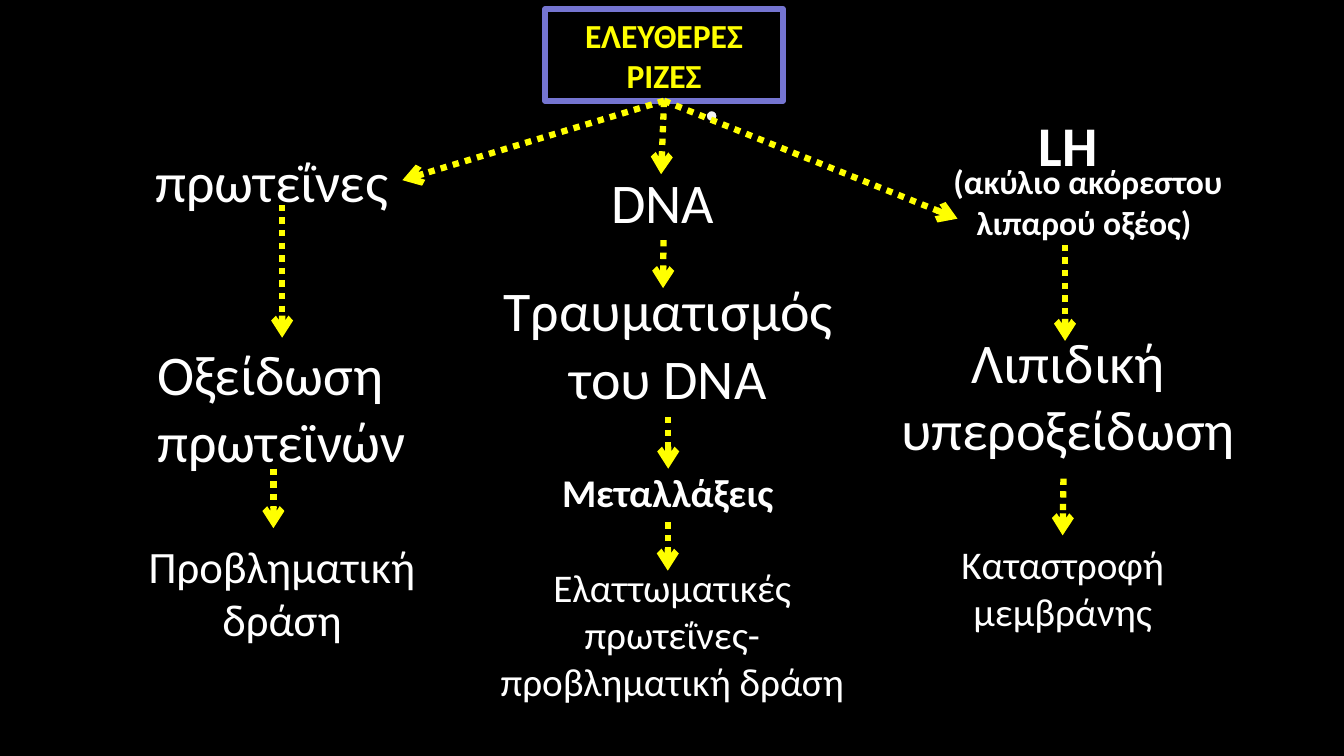
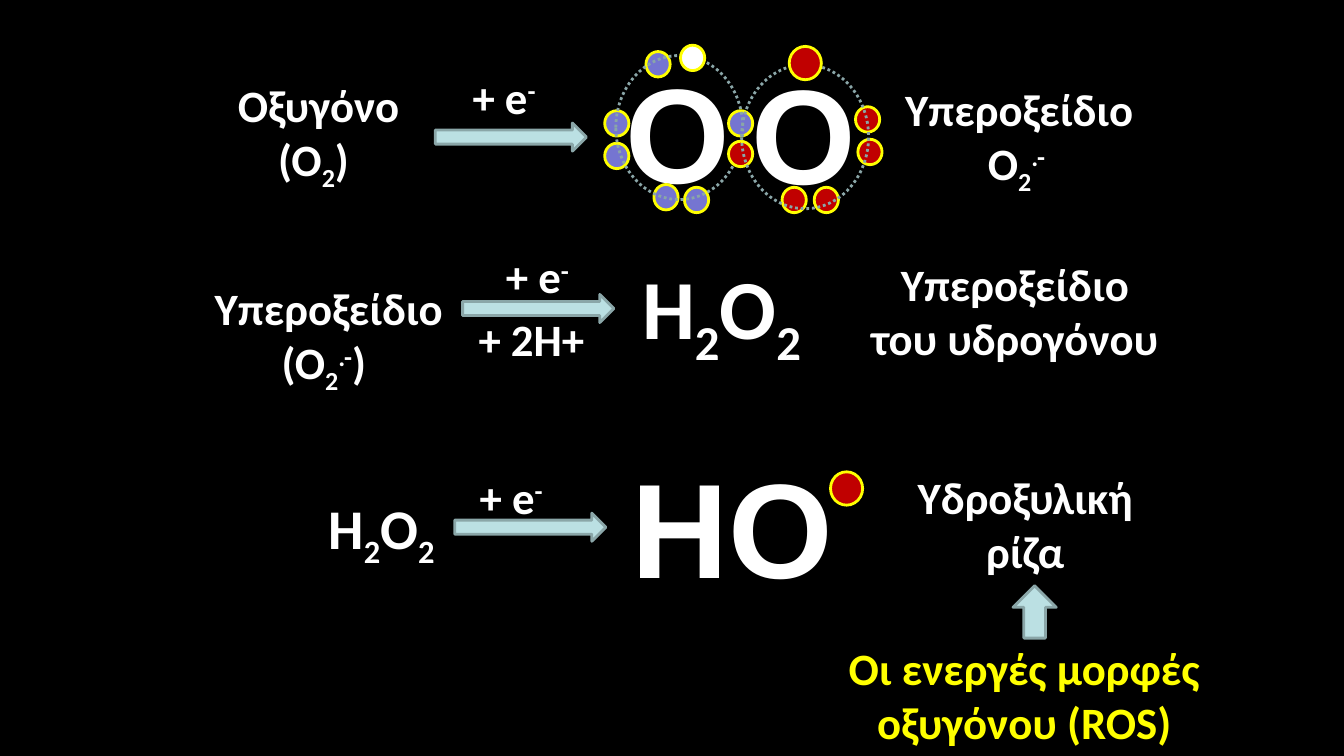
import dataclasses

import pptx
import pptx.dml.color
import pptx.enum.dml
import pptx.enum.shapes
import pptx.enum.text
import pptx.oxml.ns
import pptx.util
from lxml import etree

Cm = pptx.util.Cm
Pt = pptx.util.Pt
qn = pptx.oxml.ns.qn
SHAPE = pptx.enum.shapes.MSO_SHAPE
FIT = pptx.enum.text.MSO_AUTO_SIZE


@dataclasses.dataclass(frozen=True)
class Theme:
    black: str = "000000"
    white: str = "FFFFFF"
    pale: str = "F2F2F2"
    yellow: str = "FFFF00"
    violet: str = "7575D1"
    red: str = "C00000"
    ice: str = "BBE0E3"
    slate: str = "8AA6A8"
    body: str = "Calibri"
    atom: str = "Arial"
    small: int = 24
    note: int = 28
    label: int = 32
    head: int = 40
    formula: int = 60
    symbol: int = 96
    thick: float = 4.5
    thin: float = 2


T = Theme()
TITLE_ONLY, BLANK = 5, 6
TOP, LEFT, BOTTOM, RIGHT = range(4)
SUB2 = ("2", -25)
ELECTRON = ["+ e", ("-", 30)]
PEROXIDE = ["H", SUB2, "O", SUB2]

TITLE = "ΕΛΕΥΘΕΡΕΣ ΡΙΖΕΣ"
TITLE_BOX = (13.74, 0.23, 5.99, 2.31)
DOT_BOX = (17.73, 2.72, 0.41, 0.41)

CENTER = dict(center=True)
WRAP = dict(center=True, wrap=True)
BOLD = dict(bold=True)
BOLD_CENTER = dict(BOLD, **CENTER)
BOLD_WRAP = dict(BOLD, **WRAP)

EFFECTS = {
    "lh": ((25.93, 2.67, 2.01, 1.96), [["LH"]], T.head, BOLD),
    "acyl": ((23.72, 3.94, 7.39, 2.31), [["(ακύλιο ακόρεστου λιπαρού οξέος) "]], T.small, BOLD_WRAP),
    "proteins": ((3.66, 3.56, 6.48, 1.96), [["πρωτεΐνες"]], T.head, {}),
    "dna": ((15.16, 4.09, 3.12, 1.96), [["DNA"]], T.head, {}),
    "oxidation": ((3.71, 8.43, 6.81, 3.68), [["Οξείδωση πρωτεϊνών"]], T.head, dict(wrap=True)),
    "damage": ((12.14, 6.83, 9.4, 3.68), [["Τραυματισμός του DNA"]], T.head, WRAP),
    "lipid": ((22.22, 8.13, 9.4, 3.68), [["Λιπιδική υπεροξείδωση"]], T.head, WRAP),
    "mutations": ((12.24, 11.68, 9.4, 6.25),
                  [["Μεταλλάξεις "], ["Ελαττωματικές πρωτεΐνες-προβληματική δράση"]],
                  T.note, WRAP),
    "action": ((2.54, 13.44, 9.14, 3), [["Προβληματική δράση"]], T.label, WRAP),
    "membrane": ((22.22, 13.49, 9.12, 2.64), [["Kαταστροφή μεμβράνης"]], T.note, WRAP),
}
ARROWS = [
    (("title", BOTTOM), ("proteins", RIGHT)),
    (("title", BOTTOM), (16.66, 4.39)),
    (("title", BOTTOM), (24.13, 5.51)),
    ((7.11, 5.16), (7.11, 8.51)),
    (("dna", BOTTOM), (16.71, 7.26)),
    ((26.84, 6.17), (26.84, 8.59)),
    (("damage", BOTTOM), (16.84, 11.81)),
    ((26.8, 12.06), ("membrane", TOP)),
    ((6.89, 11.81), (6.89, 13.31)),
    ((16.83, 13.16), (16.83, 14.38)),
]

REACTIONS = [
    ((5.72, 1.83, 4.62, 3), [["Οξυγόνο"], ["(O", SUB2, ") "]], T.label, BOLD_CENTER),
    ((22.53, 1.93, 6.32, 3), [["Υπεροξείδιο"], ["O", SUB2, (".- ", 30)]], T.label, BOLD_CENTER),
    ((11.66, 1.63, 2.39, 1.63), [ELECTRON], T.label, BOLD),
    ((5.13, 6.96, 6.32, 3), [["Υπεροξείδιο"], ["(O", SUB2, (".-", 30), ") "]], T.label, BOLD_CENTER),
    ((12.5, 6.15, 2.39, 1.63), [ELECTRON], T.label, BOLD),
    ((11.81, 7.72, 3.48, 1.63), [["+ 2H+"]], T.label, BOLD),
    ((15.93, 6.32, 4.75, 2.82), [PEROXIDE], T.formula, BOLD),
    ((21.67, 6.35, 7.82, 3), [["Υπεροξείδιο"], ["του υδρογόνου"]], T.label, BOLD_CENTER),
    ((8.03, 12.32, 3.33, 1.96), [PEROXIDE], T.head, BOLD),
    ((11.84, 11.71, 2.39, 1.63), [ELECTRON], T.label, BOLD),
    ((15.67, 11.07, 5.64, 4.37), [["HΟ"]], T.symbol, dict(BOLD, font=T.atom)),
    ((22.78, 11.71, 6.12, 3), [["Υδροξυλική ρίζα"]], T.label, BOLD_WRAP),
    ((20.57, 16.03, 10.49, 3), [["Οι ενεργές μορφές οξυγόνου (ROS)"]], T.label,
     dict(BOLD_WRAP, color=T.yellow)),
]
BLOCK_ARROWS = [
    (SHAPE.RIGHT_ARROW, (10.97, 3.1, 3.81, 0.71)),
    (SHAPE.RIGHT_ARROW, (11.66, 7.42, 3.81, 0.71)),
    (SHAPE.RIGHT_ARROW, (11.46, 12.93, 3.81, 0.71)),
    (SHAPE.UP_ARROW, (25.53, 14.76, 1.09, 1.32)),
]
ELECTRON_SIZE = (0.61, 0.64)
RADICAL_SIZE = (0.81, 0.84)
ORBIT_SIZE = (3.2, 3.63)
LETTER_SIZE = (3.23, 4.52)
ATOMS = [
    dict(letter=(15.52, 1.12), orbit=(15.52, 1.4), electrons={
        T.violet: [(15.24, 2.79), (15.24, 3.61), (16.48, 4.65),
                   (18.36, 2.79), (16.28, 1.3), (17.25, 4.72)]}),
    dict(letter=(18.69, 1.14), orbit=(18.69, 1.63), electrons={
        T.white: [(17.15, 1.14)],
        T.red: [(18.36, 3.56), (21.62, 3.51), (21.56, 2.69),
                (19.71, 4.72), (20.52, 4.72)]}),
]
RADICALS = [(19.89, 1.17), (20.93, 11.89)]


def rgb(color):
    return pptx.dml.color.RGBColor.from_string(color)


def set_line(line, color, width, dotted=False):
    line.color.rgb = rgb(color)
    line.width = Pt(width)
    if dotted:
        line.dash_style = pptx.enum.dml.MSO_LINE.ROUND_DOT


def write(sp, paragraphs, size, color=T.white, font=T.body, bold=False, center=False,
          wrap=False, fit=FIT.SHAPE_TO_FIT_TEXT):
    tf = sp.text_frame
    tf.word_wrap = wrap
    tf.auto_size = fit
    for i, runs in enumerate(paragraphs):
        p = tf.add_paragraph() if i else tf.paragraphs[0]
        if center:
            p.alignment = pptx.enum.text.PP_ALIGN.CENTER
        for run in runs:
            text, base = (run, 0) if isinstance(run, str) else run
            r = p.add_run()
            r.text = text
            r.font.name = font
            r.font.size = Pt(size)
            r.font.bold = bold
            r.font.color.rgb = rgb(color)
            if base:
                r._r.get_or_add_rPr().set("baseline", str(base * 1000))


def add_text(s, box, paragraphs, size, style):
    sp = s.shapes.add_textbox(*map(Cm, box))
    write(sp, paragraphs, size, **style)
    return sp


def add_shape(s, kind, box, fill, line, width=T.thin, dotted=False):
    sp = s.shapes.add_shape(kind, *map(Cm, box))
    sp.shadow.inherit = False
    if fill:
        sp.fill.solid()
        sp.fill.fore_color.rgb = rgb(fill)
    else:
        sp.fill.background()
    set_line(sp.line, line, width, dotted)
    return sp


def add_arrow(s, start, end, boxes):
    points = [(0, 0) if isinstance(e[0], str) else e for e in (start, end)]
    cxn = s.shapes.add_connector(pptx.enum.shapes.MSO_CONNECTOR.STRAIGHT,
                                 *(Cm(v) for point in points for v in point))
    for e, connect in ((start, cxn.begin_connect), (end, cxn.end_connect)):
        if isinstance(e[0], str):
            connect(boxes[e[0]], e[1])
    set_line(cxn.line, T.yellow, T.thick, dotted=True)
    spPr = cxn._element.spPr
    etree.SubElement(spPr.find(qn("a:ln")), qn("a:tailEnd"), type="arrow")
    etree.SubElement(spPr, qn("a:effectLst"))


def build_radicals(prs):
    s = prs.slides.add_slide(prs.slide_layouts[TITLE_ONLY])
    title = s.shapes.title
    title.left, title.top, title.width, title.height = map(Cm, TITLE_BOX)
    set_line(title.line, T.violet, T.thick)
    write(title, [[TITLE]], T.small, color=T.yellow, fit=FIT.NONE, **BOLD_WRAP)
    title.text_frame.vertical_anchor = pptx.enum.text.MSO_ANCHOR.MIDDLE
    add_shape(s, SHAPE.OVAL, DOT_BOX, T.pale, T.black, T.thick)
    boxes = {name: add_text(s, *item) for name, item in EFFECTS.items()}
    boxes["title"] = title
    first, second = boxes["mutations"].text_frame.paragraphs
    first.runs[0].font.bold = True
    second.space_before = Pt(34)
    for start, end in ARROWS:
        add_arrow(s, start, end, boxes)


def build_oxygen(prs):
    s = prs.slides.add_slide(prs.slide_layouts[BLANK])
    for kind, box in BLOCK_ARROWS:
        add_shape(s, kind, box, T.ice, T.slate)
    for item in REACTIONS:
        add_text(s, *item)
    for atom in ATOMS:
        add_text(s, atom["letter"] + LETTER_SIZE, [["Ο"]], T.symbol,
                 dict(BOLD, wrap=True, font=T.atom))
        for color, places in atom["electrons"].items():
            for place in places:
                add_shape(s, SHAPE.OVAL, place + ELECTRON_SIZE, color, T.yellow)
        add_shape(s, SHAPE.OVAL, atom["orbit"] + ORBIT_SIZE, None, T.slate, dotted=True)
    for place in RADICALS:
        add_shape(s, SHAPE.OVAL, place + RADICAL_SIZE, T.red, T.yellow)


def main():
    prs = pptx.Presentation()
    prs.slide_width, prs.slide_height = Cm(33.87), Cm(19.05)
    fill = prs.slide_master.background.fill
    fill.solid()
    fill.fore_color.rgb = rgb(T.black)
    build_radicals(prs)
    build_oxygen(prs)
    prs.save("out.pptx")


if __name__ == "__main__":
    main()
